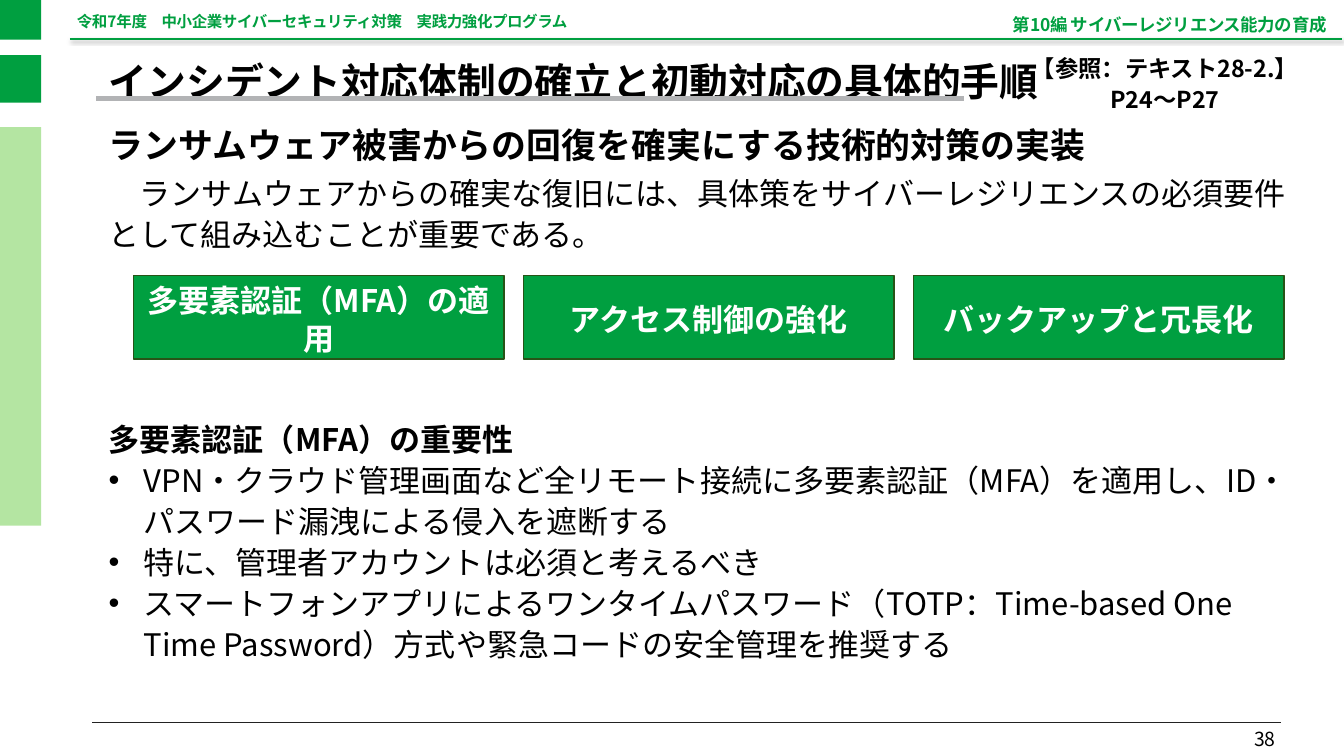
import pptx
import pptx.util
import pptx.dml.color
import pptx.enum.shapes
import pptx.enum.text
import pptx.oxml
import pptx.oxml.ns
import lxml.etree

Inches = pptx.util.Inches
Pt = pptx.util.Pt
ALIGN = pptx.enum.text.PP_ALIGN
ANCHOR = pptx.enum.text.MSO_ANCHOR
RECT = pptx.enum.shapes.MSO_SHAPE.RECTANGLE
STRAIGHT = pptx.enum.shapes.MSO_CONNECTOR.STRAIGHT
FONT = "Noto Sans CJK JP"
COLORS = {
    "green": "009F40",
    "pale": "B4E5A2",
    "edge": "275417",
    "gray": "B2B3B5",
    "dark": "222222",
    "black": "000000",
    "white": "FFFFFF",
}
THIN = (0, 0.01, 0, 0)
WIDE = (0.1, 0.05, 0.1, 0.05)
FLAT = (0.1, 0, 0.1, 0)
HEADS = ["多要素認証（MFA）の重要性"]
POINTS = [
    "•VPN・クラウド管理画面など全リモート接続に多要素認証（MFA）を適用し、ID・パスワード漏洩による侵入を遮断する",
    "•特に、管理者アカウントは必須と考えるべき",
    "•スマートフォンアプリによるワンタイムパスワード（TOTP：Time-based One Time Password）方式や緊急コードの安全管理を推奨する",
]
STEPS = ["多要素認証（MFA）の適用", "アクセス制御の強化", "バックアップと冗長化"]


def tag(name):
    return pptx.oxml.ns.qn("a:" + name)


def color(name):
    return pptx.dml.color.RGBColor.from_string(COLORS[name])


class Deck:
    def __init__(self, wide, high):
        self.show = pptx.Presentation()
        self.show.slide_width = Inches(wide)
        self.show.slide_height = Inches(high)
        self.slide = self.show.slides.add_slide(self.show.slide_layouts[5])
        self.shapes = self.slide.shapes

    def rule(self, left, top, right, hue, width, shade=False):
        line = self.shapes.add_connector(
            STRAIGHT, Inches(left), Inches(top), Inches(right), Inches(top))
        line.line.color.rgb = color(hue)
        line.line.width = Pt(width)
        props = line._element.spPr
        effect = lxml.etree.SubElement(props, tag("effectLst"))
        if shade:
            outer = lxml.etree.SubElement(
                effect, tag("outerShdw"), blurRad=str(Pt(4)),
                dist=str(Pt(3)), dir="2700000", algn="tl", rotWithShape="0")
            tone = lxml.etree.SubElement(
                outer, tag("srgbClr"), val=COLORS["black"])
            lxml.etree.SubElement(tone, tag("alpha"), val="40000")

    def block(self, box, fill, edge=None):
        shape = self.shapes.add_shape(RECT, *map(Inches, box))
        shape.shadow.inherit = False
        shape.fill.solid()
        shape.fill.fore_color.rgb = color(fill)
        if edge:
            shape.line.color.rgb = color(edge)
            shape.line.width = Pt(1.5)
        else:
            shape.line.fill.background()
        return shape

    def title(self, box, text, **style):
        shape = self.shapes.title
        sides = ("left", "top", "width", "height")
        self.style(shape, dict(zip(sides, map(Inches, box))))
        self.label(shape, [text], **style)

    def text(self, box, lines, **style):
        shape = self.shapes.add_textbox(*map(Inches, box))
        self.label(shape, lines, **style)

    def label(self, shape, lines, size, pitch, hue="black", bold=False,
              align=ALIGN.LEFT, anchor=ANCHOR.TOP, inset=WIDE, tight=False):
        frame = shape.text_frame
        left, top, right, bottom = map(Inches, inset)
        self.style(frame, {
            "word_wrap": True,
            "auto_size": pptx.enum.text.MSO_AUTO_SIZE.NONE,
            "vertical_anchor": anchor,
            "margin_left": left,
            "margin_top": top,
            "margin_right": right,
            "margin_bottom": bottom,
        })
        for index, line in enumerate(lines):
            para = frame.add_paragraph() if index else frame.paragraphs[0]
            self.style(para, {
                "alignment": align,
                "line_spacing": Pt(pitch),
                "space_before": Pt(0),
            })
            run = para.add_run()
            run.text = line.removeprefix("•")
            self.style(run.font, {
                "name": FONT,
                "size": Pt(size),
                "bold": bold or line in HEADS,
            })
            run.font.color.rgb = color(hue)
            props = run._r.get_or_add_rPr()
            lxml.etree.SubElement(props, tag("ea"), typeface=FONT)
            if tight:
                props.set("spc", "-40")
            if line.startswith("•"):
                self.bullet(para)

    def style(self, item, form):
        for name, value in form.items():
            setattr(item, name, value)

    def bullet(self, para):
        props = para._p.get_or_add_pPr()
        props.set("marL", str(Inches(0.5)))
        props.set("indent", str(Inches(-0.5)))
        lxml.etree.SubElement(props, tag("buFont"), typeface="Arial")
        lxml.etree.SubElement(props, tag("buChar"), char="•")


def main():
    deck = Deck(19.26, 10.83)
    deck.rule(1, 0.56, 19.23, "green", 2, shade=True)
    deck.rule(1.32, 10.35, 18.36, "dark", 1)
    deck.rule(1.38, 1.41, 13.81, "gray", 6)
    for top, high, fill in [(0, 0.57, "green"), (0.79, 0.68, "green"),
                            (1.82, 5.71, "pale")]:
        deck.block((0, top, 0.59, high), fill)

    deck.text((1.1, 0.22, 17.48, 0.22),
              ["令和7年度　中小企業サイバーセキュリティ対策　実践力強化プログラム"],
              size=16, pitch=15, hue="green", bold=True, inset=THIN, tight=True)
    deck.text((8.62, 0.21, 10.39, 0.29),
              ["第10編 サイバーレジリエンス能力の育成"],
              size=18, pitch=20, hue="green", bold=True, align=ALIGN.RIGHT,
              anchor=ANCHOR.MIDDLE, inset=THIN, tight=True)
    deck.text((14.05, 10.22, 4.33, 0.58), ["38"], size=20, pitch=24,
              align=ALIGN.RIGHT, anchor=ANCHOR.BOTTOM)

    deck.title((1.46, 0.85, 17.61, 0.61),
               "インシデント対応体制の確立と初動対応の具体的手順",
               size=40, pitch=48, bold=True, anchor=ANCHOR.MIDDLE, inset=FLAT)
    deck.text((1.46, 1.76, 16.34, 0.61),
              ["ランサムウェア被害からの回復を確実にする技術的対策の実装"],
              size=36, pitch=44, bold=True, anchor=ANCHOR.MIDDLE, inset=FLAT)
    deck.text((1.46, 2.4, 17.11, 1.3),
              ["　ランサムウェアからの確実な復旧には、具体策をサイバーレジリエンスの必須要件として組み込むことが重要である。"],
              size=32, pitch=42.3)
    deck.text((1.46, 5.92, 17.11, 3.6), HEADS + POINTS, size=32, pitch=42.3)

    for index, step in enumerate(STEPS):
        shape = deck.block((1.91 + 5.59 * index, 3.95, 5.31, 1.19),
                           "green", "edge")
        deck.label(shape, [step], size=32, pitch=39, hue="white", bold=True,
                   align=ALIGN.CENTER, anchor=ANCHOR.MIDDLE,
                   inset=(0.1, 0.1, 0.1, 0.05))

    deck.text((14.33, 0.69, 4.73, 0.93),
              ["【参照：テキスト28-2.】", "P24～P27"],
              size=24, pitch=32, bold=True, align=ALIGN.CENTER)
    deck.show.save("out.pptx")


if __name__ == "__main__":
    main()
